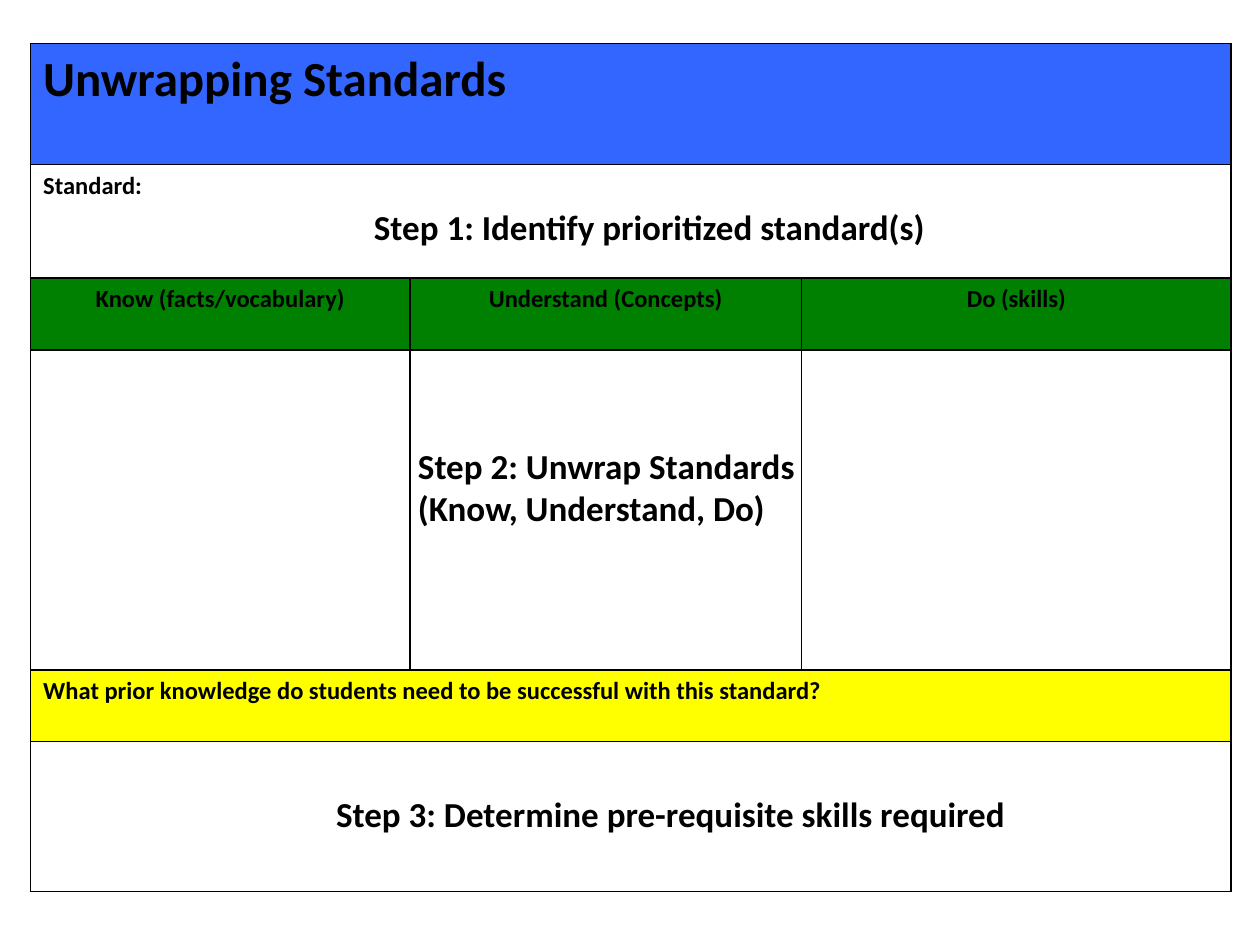
from lxml.etree import SubElement
from pptx import Presentation
from pptx.dml.color import RGBColor
from pptx.enum.text import MSO_AUTO_SIZE as AutoSize, PP_ALIGN as Align
from pptx.oxml import parse_xml
from pptx.oxml.ns import nsdecls, qn
from pptx.util import Pt

BLACK = RGBColor(0x00, 0x00, 0x00)
BLUE = RGBColor(0x33, 0x66, 0xFF)
GREEN = RGBColor(0x00, 0x80, 0x00)
YELLOW = RGBColor(0xFF, 0xFF, 0x00)

COLUMN_WIDTHS = [216.7, 126.7, 97.2, 245.5]
ROW_HEIGHTS = [69.1, 64.8, 41, 182.9, 41, 85.7]

# Row, first column, last column, text, size, alignment, fill
CELLS = [
    (0, 0, 3, "Unwrapping Standards", 28, Align.LEFT, BLUE),
    (1, 0, 3, "Standard:", 14, Align.LEFT, None),
    (2, 0, 0, "Know (facts/vocabulary)", 14, Align.CENTER, GREEN),
    (2, 1, 2, "Understand (Concepts)", 14, Align.CENTER, GREEN),
    (2, 3, 3, "Do (skills)", 14, Align.CENTER, GREEN),
    (3, 0, 0, "", 14, Align.LEFT, None),
    (3, 1, 2, "", 14, Align.LEFT, None),
    (3, 3, 3, "", 14, Align.LEFT, None),
    (4, 0, 3, "What prior knowledge do students need to be successful with this standard?",
     14, Align.LEFT, YELLOW),
    (5, 0, 1, "", 14, Align.LEFT, None),
    (5, 2, 3, "", 14, Align.LEFT, None),
]

# Left, top, width, height, text
STEPS = [
    (206.6, 113.8, 350, 31.5, "Step 1: Identify prioritized standard(s)"),
    (231.8, 250.6, 266.4, 55.7, "Step 2: Unwrap Standards (Know, Understand, Do)"),
    (185, 449.3, 405.4, 31.5, "Step 3: Determine pre-requisite skills required"),
]


def write(frame, text, size, align=Align.LEFT):
    para = frame.paragraphs[0]
    para.alignment = align
    span = para.add_run()
    span.text = text
    for name, value in {"name": "Calibri", "size": Pt(size), "bold": True}.items():
        setattr(span.font, name, value)
    span.font.color.rgb = BLACK


def add_borders(cell, sides):
    properties = cell._tc.get_or_add_tcPr()
    for position, side in enumerate("LRTB"):
        line = parse_xml(f'<a:ln{side} {nsdecls("a")} w="{Pt(1)}"/>')
        if side in sides:
            fill = SubElement(line, qn("a:solidFill"))
            SubElement(fill, qn("a:srgbClr"), val=str(BLACK))
        else:
            SubElement(line, qn("a:noFill"))
        properties.insert(position, line)


def add_standards_table(page, left, top):
    frame = page.shapes.add_table(
        len(ROW_HEIGHTS), len(COLUMN_WIDTHS), Pt(left), Pt(top),
        Pt(sum(COLUMN_WIDTHS)), Pt(sum(ROW_HEIGHTS)))
    table = frame.table
    table.first_row = table.horz_banding = False
    for column, width in zip(table.columns, COLUMN_WIDTHS):
        column.width = Pt(width)
    for row, height in zip(table.rows, ROW_HEIGHTS):
        row.height = Pt(height)

    last_row, last_column = len(ROW_HEIGHTS) - 1, len(COLUMN_WIDTHS) - 1
    for row, first, last, text, size, align, color in CELLS:
        cell = table.cell(row, first)
        if last > first:
            cell.merge(table.cell(row, last))
        if text:
            write(cell.text_frame, text, size, align)
        # The bottom row has no line between its two halves
        inner = row < last_row
        sides = "TB"
        sides += "L" if inner or first == 0 else ""
        sides += "R" if inner or last == last_column else ""
        for index in range(first, last + 1):
            part = table.cell(row, index)
            if color is None:
                part.fill.background()
            else:
                part.fill.solid()
                part.fill.fore_color.rgb = color
            add_borders(part, sides)


def add_step(page, left, top, width, height, text):
    box = page.shapes.add_textbox(Pt(left), Pt(top), Pt(width), Pt(height))
    for name, value in {"word_wrap": True, "auto_size": AutoSize.SHAPE_TO_FIT_TEXT}.items():
        setattr(box.text_frame, name, value)
    write(box.text_frame, text, 20)


def main():
    deck = Presentation()
    deck.slide_width, deck.slide_height = Pt(720), Pt(540)
    page = deck.slides.add_slide(deck.slide_layouts[6])
    # Planning grid
    add_standards_table(page, 17.5, 25)
    # Step captions over the grid
    for step in STEPS:
        add_step(page, *step)
    deck.save("out.pptx")


if __name__ == "__main__":
    main()
